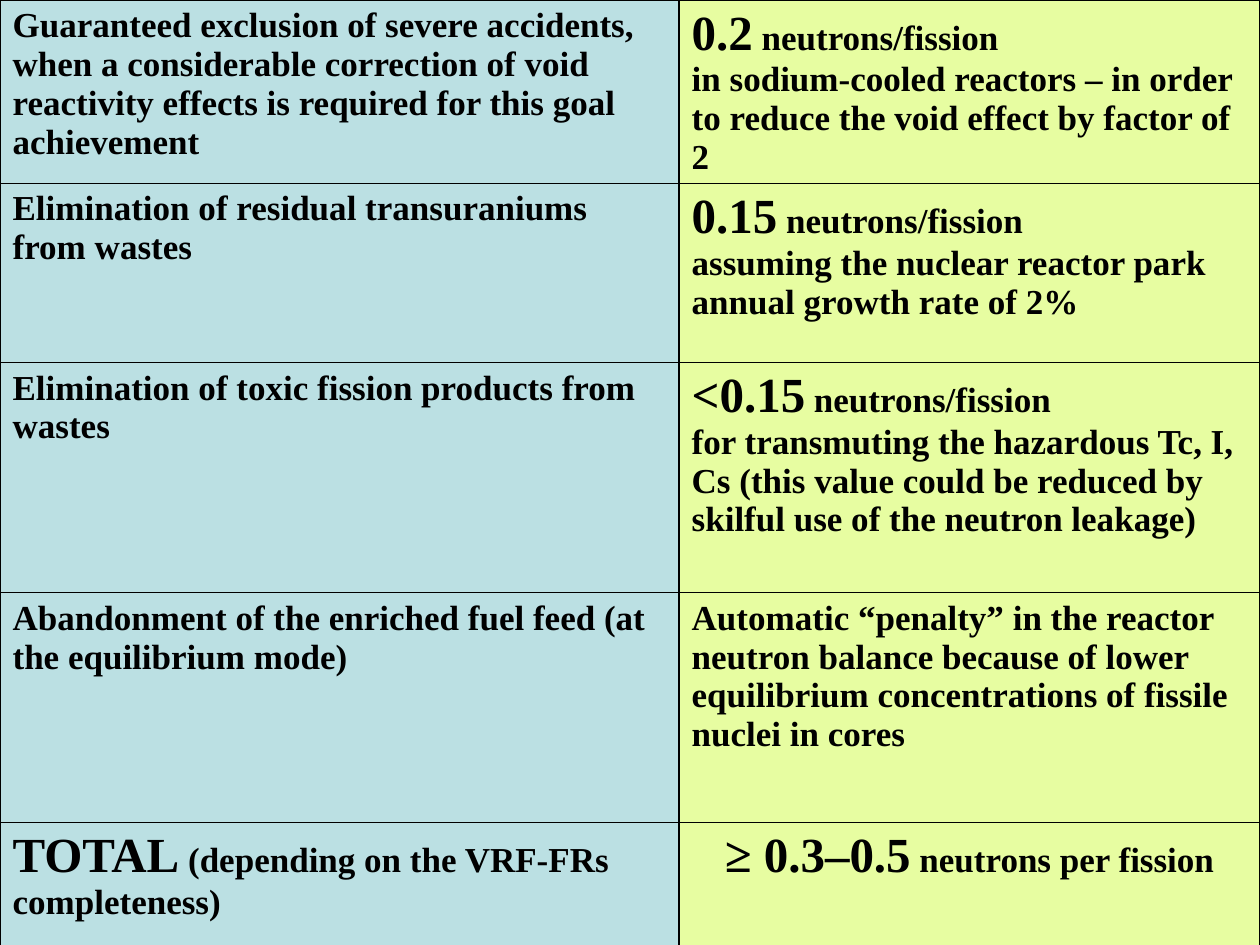
from dataclasses import dataclass

from lxml import etree
from pptx import Presentation
from pptx.dml import color
from pptx.enum import text
from pptx.oxml import ns
from pptx import util as u


@dataclass(frozen=True)
class Theme:
    font: str = "Times New Roman"
    ink: str = "000000"
    goal_fill: str = "BBE0E3"
    cost_fill: str = "E7FDA1"
    body: int = 20
    figure: int = 28
    border: float = 1


@dataclass(frozen=True)
class Entry:
    body: str = ""
    figure: str = ""
    unit: str = ""
    centred: bool = False


@dataclass(frozen=True)
class Requirement:
    height: float
    goal: Entry
    cost: Entry


THEME = Theme()
COLUMN_WIDTHS = (13.69, 11.71)
PER_FISSION = " neutrons/fission"
REQUIREMENTS = (
    Requirement(
        3.61,
        Entry("Guaranteed exclusion of severe accidents, when a considerable correction "
              "of void reactivity effects is required for this goal achievement"),
        Entry("in sodium-cooled reactors – in order to reduce the void effect by factor of 2",
              "0.2", PER_FISSION),
    ),
    Requirement(
        3.61,
        Entry("Elimination of residual transuraniums from wastes"),
        Entry("assuming the nuclear reactor park annual growth rate of 2%",
              "0.15", PER_FISSION),
    ),
    Requirement(
        4.64,
        Entry("Elimination of toxic fission products from wastes"),
        Entry("for transmuting the hazardous Tc, I, Cs (this value could be reduced by "
              "skilful use of the neutron leakage)", "<0.15", PER_FISSION),
    ),
    Requirement(
        4.63,
        Entry("Abandonment of the enriched fuel feed (at the equilibrium mode)"),
        Entry("Automatic “penalty” in the reactor neutron balance because of lower "
              "equilibrium concentrations of fissile nuclei in cores"),
    ),
    Requirement(
        2.57,
        Entry(figure="TOTAL", unit=" (depending on the VRF-FRs completeness)"),
        Entry(figure="≥ 0.3–0.5", unit=" neutrons per fission", centred=True),
    ),
)


def add_words(paragraph, words: str, size: int) -> None:
    run = paragraph.add_run()
    run.text = words
    run.font.name = THEME.font
    run.font.size = u.Pt(size)
    run.font.bold = True
    run.font.color.rgb = color.RGBColor.from_string(THEME.ink)


def add_borders(cell) -> None:
    properties = cell._tc.get_or_add_tcPr()
    for index, side in enumerate(("lnL", "lnR", "lnT", "lnB")):
        line = etree.Element(ns.qn(f"a:{side}"), w=str(u.Pt(THEME.border)))
        fill = etree.SubElement(line, ns.qn("a:solidFill"))
        etree.SubElement(fill, ns.qn("a:srgbClr"), val=THEME.ink)
        properties.insert(index, line)


def fill_cell(cell, entry: Entry, background: str) -> None:
    cell.fill.solid()
    cell.fill.fore_color.rgb = color.RGBColor.from_string(background)
    add_borders(cell)
    frame = cell.text_frame
    paragraph = frame.paragraphs[0]
    if entry.figure:
        add_words(paragraph, entry.figure, THEME.figure)
        add_words(paragraph, entry.unit, THEME.body)
    if entry.centred:
        paragraph.alignment = text.PP_ALIGN.CENTER
    if entry.body:
        if entry.figure:
            paragraph = frame.add_paragraph()
        add_words(paragraph, entry.body, THEME.body)


def add_balance(slide) -> None:
    balance = slide.shapes.add_table(
        len(REQUIREMENTS), len(COLUMN_WIDTHS), 0, 0,
        u.Cm(sum(COLUMN_WIDTHS)), u.Cm(sum(r.height for r in REQUIREMENTS)),
    ).table
    balance.first_row = False
    balance.horz_banding = False
    for column, width in zip(balance.columns, COLUMN_WIDTHS):
        column.width = u.Cm(width)
    for index, requirement in enumerate(REQUIREMENTS):
        balance.rows[index].height = u.Cm(requirement.height)
        fill_cell(balance.cell(index, 0), requirement.goal, THEME.goal_fill)
        fill_cell(balance.cell(index, 1), requirement.cost, THEME.cost_fill)


def main() -> None:
    deck = Presentation()
    deck.slide_width = u.Cm(25.4)
    deck.slide_height = u.Cm(19.05)
    add_balance(deck.slides.add_slide(deck.slide_layouts[6]))
    deck.save("out.pptx")


if __name__ == "__main__":
    main()
